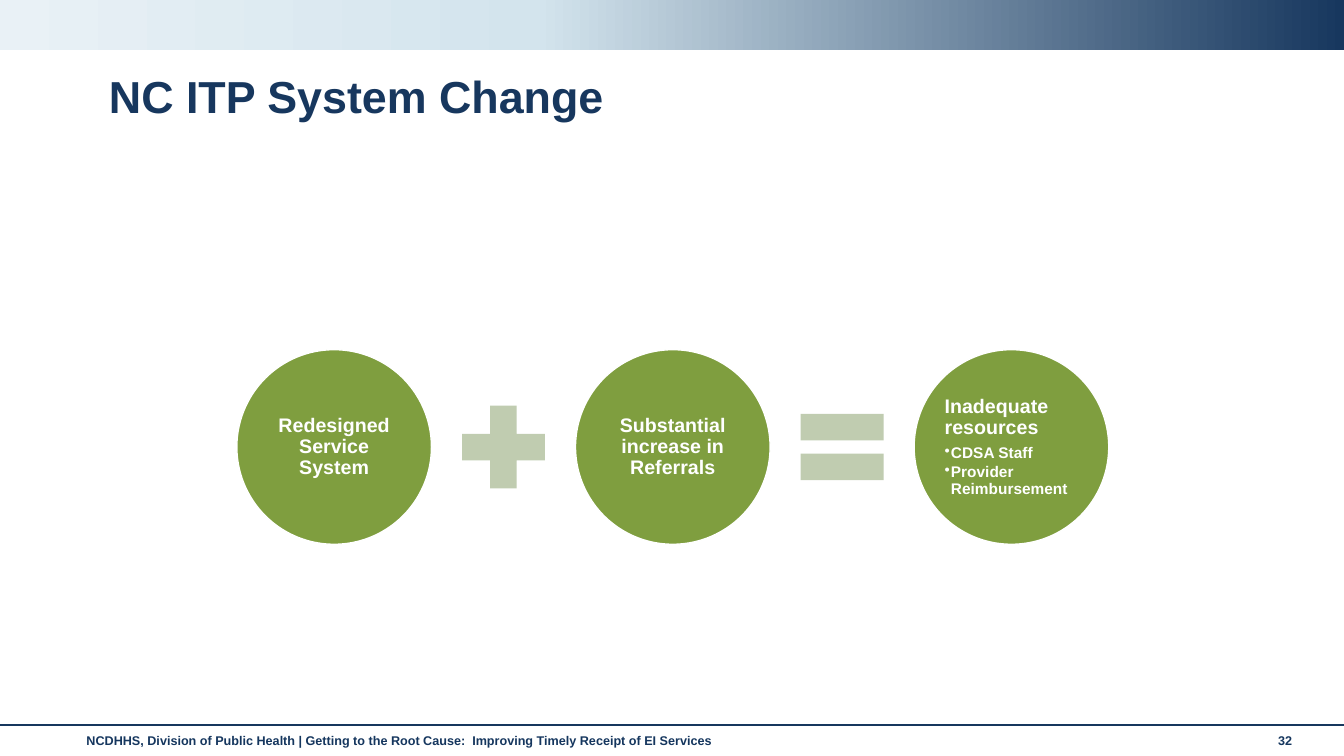
from copy import deepcopy

from lxml import etree
from pptx import Presentation
from pptx.dml.color import RGBColor
from pptx.enum.shapes import MSO_CONNECTOR, MSO_SHAPE
from pptx.enum.text import MSO_ANCHOR, PP_ALIGN
from pptx.oxml.ns import qn
from pptx.util import Pt

NAVY = RGBColor(0x17, 0x37, 0x5E)
FOOTER_NAVY = RGBColor(0x15, 0x36, 0x5E)
SKY = RGBColor(0xD3, 0xE4, 0xED)
PALE = RGBColor(0xE9, 0xF1, 0xF6)
GREEN = RGBColor(0x7F, 0x9E, 0x3F)
SAGE = RGBColor(0xC0, 0xCC, 0xB0)
WHITE = RGBColor(0xFF, 0xFF, 0xFF)

RECTANGLE, OVAL = MSO_SHAPE.RECTANGLE, MSO_SHAPE.OVAL
PLUS, EQUAL = MSO_SHAPE.MATH_PLUS, MSO_SHAPE.MATH_EQUAL
STRAIGHT = MSO_CONNECTOR.STRAIGHT
TOP, MIDDLE = MSO_ANCHOR.TOP, MSO_ANCHOR.MIDDLE
LEFT, CENTER = PP_ALIGN.LEFT, PP_ALIGN.CENTER

FONT = "Arial"
PAGE_WIDTH, PAGE_HEIGHT = 960, 540

TERMS = [
    ("Redesigned Service System", []),
    ("Substantial increase in Referrals", []),
    ("Inadequate resources", ["CDSA Staff", "Provider Reimbursement"]),
]
OPERATORS = [PLUS, EQUAL]


def style_paragraph(para, size, color, align=LEFT):
    para.alignment = align
    for span in para.runs:
        span.font.name = FONT
        span.font.size = Pt(size)
        span.font.bold = True
        span.font.color.rgb = color


def add_text(page, left, top, width, height, text, size, color):
    box = page.shapes.add_textbox(Pt(left), Pt(top), Pt(width), Pt(height))
    frame = box.text_frame
    frame.word_wrap = True
    frame.vertical_anchor = TOP
    frame.text = text
    style_paragraph(frame.paragraphs[0], size, color)
    return frame


def add_plain_shape(page, kind, left, top, width, height, color):
    shape = page.shapes.add_shape(kind, Pt(left), Pt(top), Pt(width), Pt(height))
    shape.shadow.inherit = False
    shape.fill.solid()
    shape.fill.fore_color.rgb = color
    shape.line.fill.background()
    return shape


def add_header_band(page, left, top, width, height):
    band = add_plain_shape(page, RECTANGLE, left, top, width, height, NAVY)
    band.fill.gradient()
    band.fill.gradient_angle = 0
    stop_list = next(band._element.iter(qn("a:gsLst")))
    stop_list.insert(1, deepcopy(stop_list[0]))
    shades = [(0, PALE), (0.4, SKY), (1, NAVY)]
    for stop, (position, color) in zip(band.fill.gradient_stops, shades):
        stop.position = position
        stop.color.rgb = color


def add_footer(page, left, top, width):
    rule = page.shapes.add_connector(STRAIGHT, Pt(left), Pt(top), Pt(left + width), Pt(top))
    rule.line.color.rgb = NAVY
    rule.line.width = Pt(1.75)
    etree.SubElement(rule._element.spPr, qn("a:effectLst"))
    add_text(page, left + 54.7, top + 2, 839.5, 21,
             "NCDHHS, Division of Public Health | Getting to the Root Cause:  "
             "Improving Timely Receipt of EI Services", 9, FOOTER_NAVY)
    add_text(page, left + 905.8, top + 2, 42.5, 21, "32", 9, FOOTER_NAVY)


def set_title(page, left, top, width, height):
    title = page.shapes.title
    title.left, title.top = Pt(left), Pt(top)
    title.width, title.height = Pt(width), Pt(height)
    title.text_frame.text = "NC ITP System Change"
    title.text_frame.vertical_anchor = MIDDLE
    para = title.text_frame.paragraphs[0]
    para.line_spacing = 0.9
    style_paragraph(para, 32, NAVY)


def add_bullet(para):
    properties = para._p.get_or_add_pPr()
    properties.set("marL", str(Pt(4.5)))
    properties.set("indent", str(Pt(-4.5)))
    bullet = etree.SubElement(properties, qn("a:buChar"))
    bullet.set("char", "•")


def add_term(page, left, top, size, heading, points):
    circle = add_plain_shape(page, OVAL, left, top, size, size, GREEN)
    circle.line.color.rgb = WHITE
    circle.line.width = Pt(1)
    inset = 20.4
    inner = size - 2 * inset
    frame = add_text(page, left + inset, top + inset, inner, inner, heading, 14, WHITE)
    frame.vertical_anchor = MIDDLE
    frame.margin_left = frame.margin_right = Pt(1.4)
    frame.margin_top = frame.margin_bottom = Pt(1.4)
    para = frame.paragraphs[0]
    para.alignment = LEFT if points else CENTER
    para.line_spacing = 0.9
    para.space_after = Pt(5)
    for point in points:
        para = frame.add_paragraph()
        para.text = point
        para.level = 1
        para.line_spacing = 0.9
        para.space_after = Pt(1.65)
        style_paragraph(para, 11, WHITE)
        add_bullet(para)


def add_equation(page, left, top, width, height):
    operator_size = 80.6
    step = (width - height) / (len(TERMS) - 1)
    for index, (heading, points) in enumerate(TERMS):
        add_term(page, left + index * step, top, height, heading, points)
    gap = (step - height - operator_size) / 2
    for index, kind in enumerate(OPERATORS):
        add_plain_shape(page, kind, left + index * step + height + gap,
                        top + (height - operator_size) / 2,
                        operator_size, operator_size, SAGE)


def main():
    deck = Presentation()
    deck.slide_width, deck.slide_height = Pt(PAGE_WIDTH), Pt(PAGE_HEIGHT)
    page = deck.slides.add_slide(deck.slide_layouts[5])
    add_header_band(page, 0, 0, PAGE_WIDTH, 36)
    set_title(page, 70.6, 49, 823.7, 43.2)
    add_equation(page, 169.2, 249.8, 622.8, 139)
    add_footer(page, 0, 517.7, PAGE_WIDTH)
    deck.save("out.pptx")


if __name__ == "__main__":
    main()
